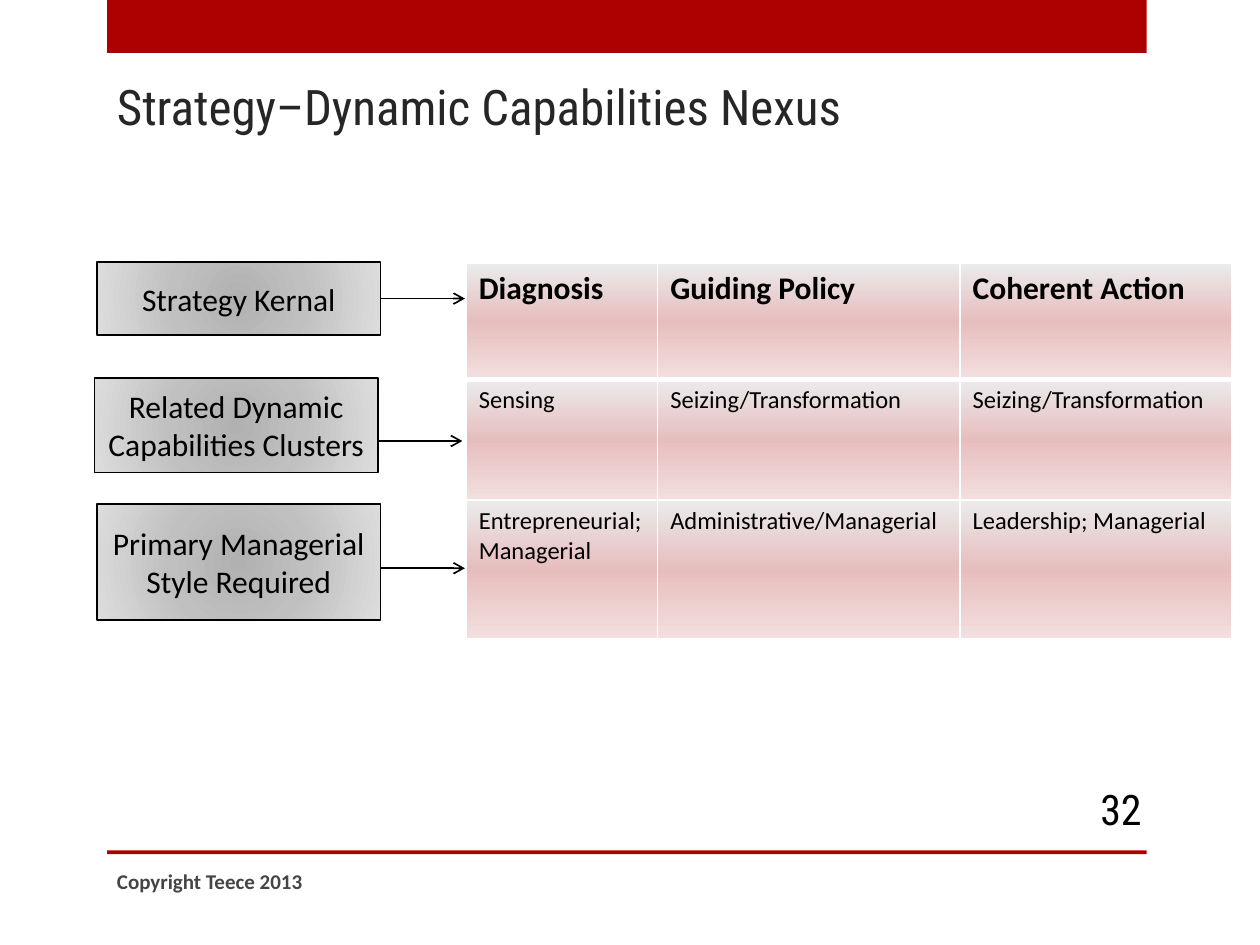
from dataclasses import dataclass

from lxml import etree
from pptx import Presentation
from pptx import util as u
from pptx.dml.color import RGBColor
from pptx.enum import shapes, text
from pptx.oxml import ns

COLORS = {
    "red": "AD0101", "title": "262626", "black": "000000",
    "footer": "454545", "border": "FFFFFF",
}
BOX_STOPS = [(0, "B1B1B1"), (45, "C0C0C0"), (100, "DDDDDD")]
CELL_STOPS = [(0, "EBEBEC"), (50, "E7BEBE"), (100, "F3DFDF")]
ARROW_LENGTH = 0.67


@dataclass
class Label:
    wording: str
    left: float
    top: float
    width: float
    height: float
    size: int
    font: str
    color: str
    bold: bool = False
    align: text.PP_ALIGN = text.PP_ALIGN.LEFT
    anchor: text.MSO_ANCHOR = text.MSO_ANCHOR.MIDDLE


@dataclass
class Stage:
    wording: str
    left: float
    top: float
    height: float
    arrow_y: float
    joined: bool = False


LABELS = [
    Label("Strategy–Dynamic Capabilities Nexus", 0.83, 0.25, 8.5, 0.87, 28,
          "Roboto Condensed", "title", anchor=text.MSO_ANCHOR.BOTTOM),
    Label("32", 8.33, 6.22, 0.83, 0.4, 24, "Roboto Condensed", "black",
          align=text.PP_ALIGN.RIGHT),
    Label("Copyright Teece 2013", 0.83, 6.79, 5.33, 0.4, 12, "Calibri",
          "footer", bold=True),
]
STAGES = [
    Stage("Strategy Kernal", 0.77, 2.08, 0.58, 2.37, joined=True),
    Stage("Related Dynamic Capabilities Clusters", 0.75, 3, 0.75, 3.5),
    Stage("Primary Managerial Style Required", 0.77, 4, 0.92, 4.51),
]
STAGE_WIDTH = 2.25
COLUMN_WIDTHS = [1.52, 2.4, 2.16]
ROW_HEIGHTS = [0.92, 0.96, 1.1]
TABLE_ROWS = [
    ["Diagnosis", "Guiding Policy", "Coherent Action"],
    ["Sensing", "Seizing/Transformation", "Seizing/Transformation"],
    ["Entrepreneurial; Managerial", "Administrative/Managerial",
     "Leadership; Managerial"],
]


def rgb(name: str) -> RGBColor:
    return RGBColor.from_string(COLORS[name])


def add_child(parent, tag: str, **attributes):
    return etree.SubElement(parent, ns.qn(tag), **attributes)


def add_gradient(properties, stops: list, radial: bool) -> None:
    gradient = add_child(properties, "a:gradFill", rotWithShape="1")
    stop_list = add_child(gradient, "a:gsLst")
    for position, color in stops:
        stop = add_child(stop_list, "a:gs", pos=str(position * 1000))
        add_child(stop, "a:srgbClr", val=color)
    if radial:
        path = add_child(gradient, "a:path", path="circle")
        add_child(path, "a:fillToRect", **dict.fromkeys("ltrb", "100000"))
    else:
        add_child(gradient, "a:lin", ang="5400000", scaled="0")


def style_paragraph(paragraph, wording: str, size: int, font: str,
                    color: str, bold: bool = False) -> None:
    paragraph.text = wording
    paragraph.font.size = u.Pt(size)
    paragraph.font.name = font
    paragraph.font.bold = bold
    paragraph.font.color.rgb = rgb(color)


def add_rectangle(slide, left: float, top: float, width: float, height: float):
    shape = slide.shapes.add_shape(
        shapes.MSO_SHAPE.RECTANGLE, u.Inches(left), u.Inches(top),
        u.Inches(width), u.Inches(height))
    shape.shadow.inherit = False
    return shape


def add_bar(slide, top: float, height: float) -> None:
    bar = add_rectangle(slide, 0.85, top, 8.25, height)
    bar.fill.solid()
    bar.fill.fore_color.rgb = rgb("red")
    bar.line.fill.background()


def add_label(slide, label: Label) -> None:
    box = slide.shapes.add_textbox(
        u.Inches(label.left), u.Inches(label.top),
        u.Inches(label.width), u.Inches(label.height))
    frame = box.text_frame
    frame.word_wrap = True
    frame.vertical_anchor = label.anchor
    paragraph = frame.paragraphs[0]
    paragraph.alignment = label.align
    style_paragraph(paragraph, label.wording, label.size, label.font,
                    label.color, label.bold)


def add_stage(slide, stage: Stage):
    box = add_rectangle(slide, stage.left, stage.top, STAGE_WIDTH, stage.height)
    effects = box._element.spPr.find(ns.qn("a:effectLst"))
    add_gradient(box._element.spPr, BOX_STOPS, radial=True)
    box._element.spPr.append(effects)  # effects must follow the fill
    box.line.color.rgb = rgb("black")
    box.line.width = u.Pt(0.75)
    frame = box.text_frame
    frame.word_wrap = True
    frame.vertical_anchor = text.MSO_ANCHOR.MIDDLE
    frame.paragraphs[0].alignment = text.PP_ALIGN.CENTER
    style_paragraph(frame.paragraphs[0], stage.wording, 18, "Calibri", "black")
    return box


def add_arrow(slide, stage: Stage, box) -> None:
    start = stage.left + STAGE_WIDTH
    y = u.Inches(stage.arrow_y)
    arrow = slide.shapes.add_connector(
        shapes.MSO_CONNECTOR.STRAIGHT, u.Inches(start), y,
        u.Inches(start + ARROW_LENGTH), y)
    if stage.joined:
        arrow.begin_connect(box, 3)
    arrow.line.color.rgb = rgb("black")
    arrow.line.width = u.Pt(1)
    add_child(arrow.line._get_or_add_ln(), "a:tailEnd", type="arrow")
    add_child(arrow._element.spPr, "a:effectLst")


def add_border(properties, side: str, width: float) -> None:
    line = add_child(properties, f"a:ln{side}", w=str(u.Pt(width)))
    fill = add_child(line, "a:solidFill")
    add_child(fill, "a:srgbClr", val=COLORS["border"])


def add_matrix(slide) -> None:
    table = slide.shapes.add_table(
        len(ROW_HEIGHTS), len(COLUMN_WIDTHS), u.Inches(3.7), u.Inches(2.09),
        u.Inches(sum(COLUMN_WIDTHS)), u.Inches(sum(ROW_HEIGHTS))).table
    table.horz_banding = False
    for column, width in zip(table.columns, COLUMN_WIDTHS):
        column.width = u.Inches(width)
    for index, (row, height) in enumerate(zip(table.rows, ROW_HEIGHTS)):
        row.height = u.Inches(height)
        header = index == 0
        for cell, wording in zip(row.cells, TABLE_ROWS[index]):
            style_paragraph(cell.text_frame.paragraphs[0], wording,
                            18 if header else 14, "Calibri", "black", header)
            properties = cell._tc.get_or_add_tcPr()
            for side in "LRTB":
                thick = (index, side) in [(0, "B"), (1, "T")]
                add_border(properties, side, 3 if thick else 1)
            add_gradient(properties, CELL_STOPS, radial=False)


def main() -> None:
    presentation = Presentation()
    presentation.slide_width = u.Inches(10)
    presentation.slide_height = u.Inches(7.5)
    slide = presentation.slides.add_slide(presentation.slide_layouts[6])

    # Frame and wording
    add_bar(slide, 0, 0.42)
    add_bar(slide, 6.75, 0.03)
    for label in LABELS:
        add_label(slide, label)

    # Stages, matrix and the arrows between them
    boxes = [add_stage(slide, stage) for stage in STAGES]
    add_matrix(slide)
    for stage, box in zip(STAGES, boxes):
        add_arrow(slide, stage, box)

    presentation.save("out.pptx")


if __name__ == "__main__":
    main()
